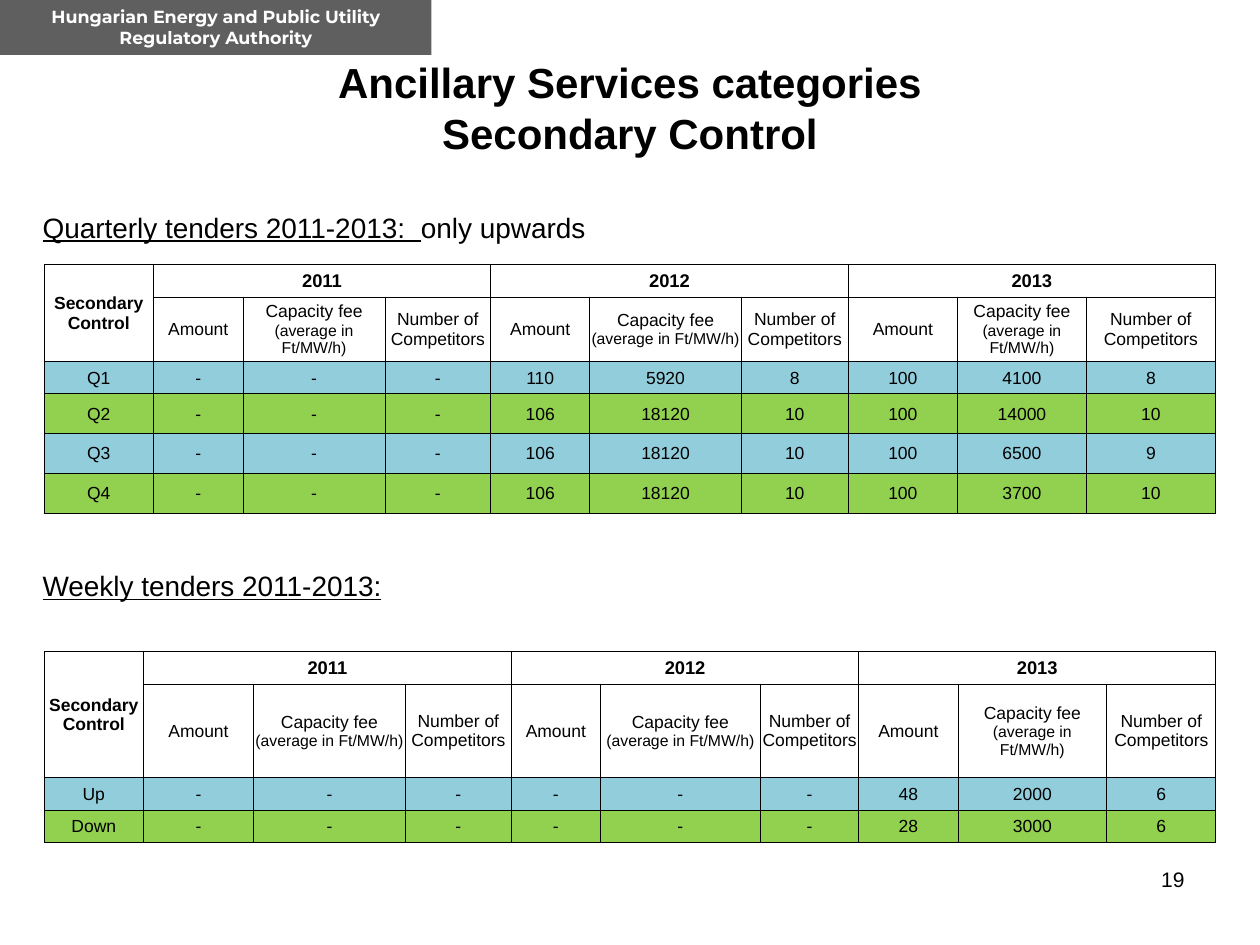
import lxml.etree
import pptx
import pptx.dml.color
import pptx.enum.shapes
import pptx.enum.text
import pptx.oxml.ns
import pptx.util

Cm = pptx.util.Cm
Pt = pptx.util.Pt
Color = pptx.dml.color.RGBColor
Align = pptx.enum.text.PP_ALIGN
Anchor = pptx.enum.text.MSO_ANCHOR

BLACK = Color(0x00, 0x00, 0x00)
WHITE = Color(0xFF, 0xFF, 0xFF)
GRAY = Color(0x5F, 0x5F, 0x5F)
BLUE = Color(0x92, 0xCD, 0xDC)
GREEN = Color(0x92, 0xD0, 0x50)

YEARS = ["2011", "2012", "2013"]
HEADS = [
    [("Amount", 10)],
    [("Capacity fee ", 10), ("(average in Ft/MW/h)", 9)],
    [("Number of Competitors", 10)],
]
THICK = (4, 7)

QUARTER = {
    "top": 5.33,
    "cols": [2.2, 1.81, 2.86, 2.13, 2, 3.05, 2.16, 2.2, 2.6, 2.6],
    "rows": [0.66, 1.29, 0.66, 0.8, 0.8, 0.8],
    "data": [
        ["Q1", "-", "-", "-", "110", "5920", "8", "100", "4100", "8"],
        ["Q2", "-", "-", "-", "106", "18120", "10", "100", "14000", "10"],
        ["Q3", "-", "-", "-", "106", "18120", "10", "100", "6500", "9"],
        ["Q4", "-", "-", "-", "106", "18120", "10", "100", "3700", "10"],
    ],
}
WEEK = {
    "top": 13.13,
    "cols": [2, 2.22, 3.06, 2.14, 1.79, 3.23, 1.98, 2, 3, 2.2],
    "rows": [0.66, 1.88, 0.66, 0.66],
    "data": [
        ["Up", "-", "-", "-", "-", "-", "-", "48", "2000", "6"],
        ["Down", "-", "-", "-", "-", "-", "-", "28", "3000", "6"],
    ],
}


def style(run, size, bold=False, color=BLACK, face="Arial"):
    run.font.size = Pt(size)
    run.font.bold = bold
    run.font.name = face
    run.font.color.rgb = color


def add_text(slide, box, text, size, align=Align.LEFT, bold=False):
    frame = slide.shapes.add_textbox(*map(Cm, box)).text_frame
    frame.word_wrap = True
    frame.text = text
    for para in frame.paragraphs:
        para.alignment = align
        for run in para.runs:
            style(run, size, bold)
    return frame


def add_head(slide, text, top, tail=""):
    frame = add_text(slide, (0.61, top, 21.4, 0.94), text, 16)
    para = frame.paragraphs[0]
    para.runs[0].font.underline = True
    if tail:
        run = para.add_run()
        run.text = tail
        style(run, 16)


def add_badge(slide, text):
    badge = slide.shapes.add_shape(
        pptx.enum.shapes.MSO_SHAPE.RECTANGLE, 0, 0, Cm(8.7), Cm(1.11))
    badge.shadow.inherit = False
    badge.fill.solid()
    badge.fill.fore_color.rgb = GRAY
    badge.line.fill.background()
    frame = badge.text_frame
    frame.word_wrap = True
    frame.vertical_anchor = Anchor.MIDDLE
    frame.text = text
    frame.paragraphs[0].alignment = Align.CENTER
    style(frame.paragraphs[0].runs[0], 10, True, WHITE, "Montserrat")


def add_edge(cell, tag, width):
    qn = pptx.oxml.ns.qn
    props = cell._tc.get_or_add_tcPr()
    line = lxml.etree.SubElement(props, qn("a:" + tag), w=str(Pt(width)))
    fill = lxml.etree.SubElement(line, qn("a:solidFill"))
    lxml.etree.SubElement(fill, qn("a:srgbClr"), val=str(BLACK))


def set_frame(cell, col, span=1):
    left = 1 if col in THICK else 0.5
    right = 1 if col + span in THICK else 0.5
    for tag, width in zip(("lnL", "lnR", "lnT", "lnB"), (left, right, 0.5, 0.5)):
        add_edge(cell, tag, width)


def fill_cell(cell, parts, bold=False):
    cell.vertical_anchor = Anchor.MIDDLE
    cell.margin_left = cell.margin_right = cell.margin_top = Cm(0.02)
    cell.margin_bottom = 0
    para = cell.text_frame.paragraphs[0]
    para.alignment = Align.CENTER
    for text, size in parts:
        run = para.add_run()
        run.text = text
        style(run, size, bold)


def add_grid(slide, top, cols, rows, data):
    shape = slide.shapes.add_table(
        len(rows), len(cols), Cm(0.89), Cm(top), Cm(sum(cols)), Cm(sum(rows)))
    table = shape.table
    table.first_row = table.horz_banding = False
    for col, width in zip(table.columns, cols):
        col.width = Cm(width)
    for row, height in zip(table.rows, rows):
        row.height = Cm(height)
    for row in range(len(rows)):
        for col in range(len(cols)):
            cell = table.cell(row, col)
            set_frame(cell, col, 3 if row == 0 and col % 3 == 1 else 1)
            if row < 2:
                cell.fill.background()
            else:
                cell.fill.solid()
                cell.fill.fore_color.rgb = GREEN if row % 2 else BLUE
                fill_cell(cell, [(data[row - 2][col], 10)])
    table.cell(0, 0).merge(table.cell(1, 0))
    fill_cell(table.cell(0, 0), [("Secondary Control", 10)], True)
    for first, year in zip((1, 4, 7), YEARS):
        table.cell(0, first).merge(table.cell(0, first + 2))
        fill_cell(table.cell(0, first), [(year, 10.5)], True)
        for step, parts in enumerate(HEADS):
            fill_cell(table.cell(1, first + step), parts)


def main():
    deck = pptx.Presentation()
    deck.slide_width = Cm(25.4)
    deck.slide_height = Cm(19.05)
    slide = deck.slides.add_slide(deck.slide_layouts[6])
    title = add_text(slide, (1.5, 1.68, 22.4, 0.97),
                     "Ancillary Services categories\nSecondary Control",
                     24, Align.CENTER, True)
    title.vertical_anchor = Anchor.MIDDLE
    add_text(slide, (18.21, 17.35, 5.92, 1.32), "19", 12, Align.RIGHT)
    add_badge(slide, "Hungarian Energy and Public Utility Regulatory Authority")
    add_head(slide, "Quarterly tenders 2011-2013:  ", 4.11, "only upwards")
    add_grid(slide, **QUARTER)
    add_head(slide, "Weekly tenders 2011-2013:", 11.33)
    add_grid(slide, **WEEK)
    deck.save("out.pptx")


if __name__ == "__main__":
    main()
